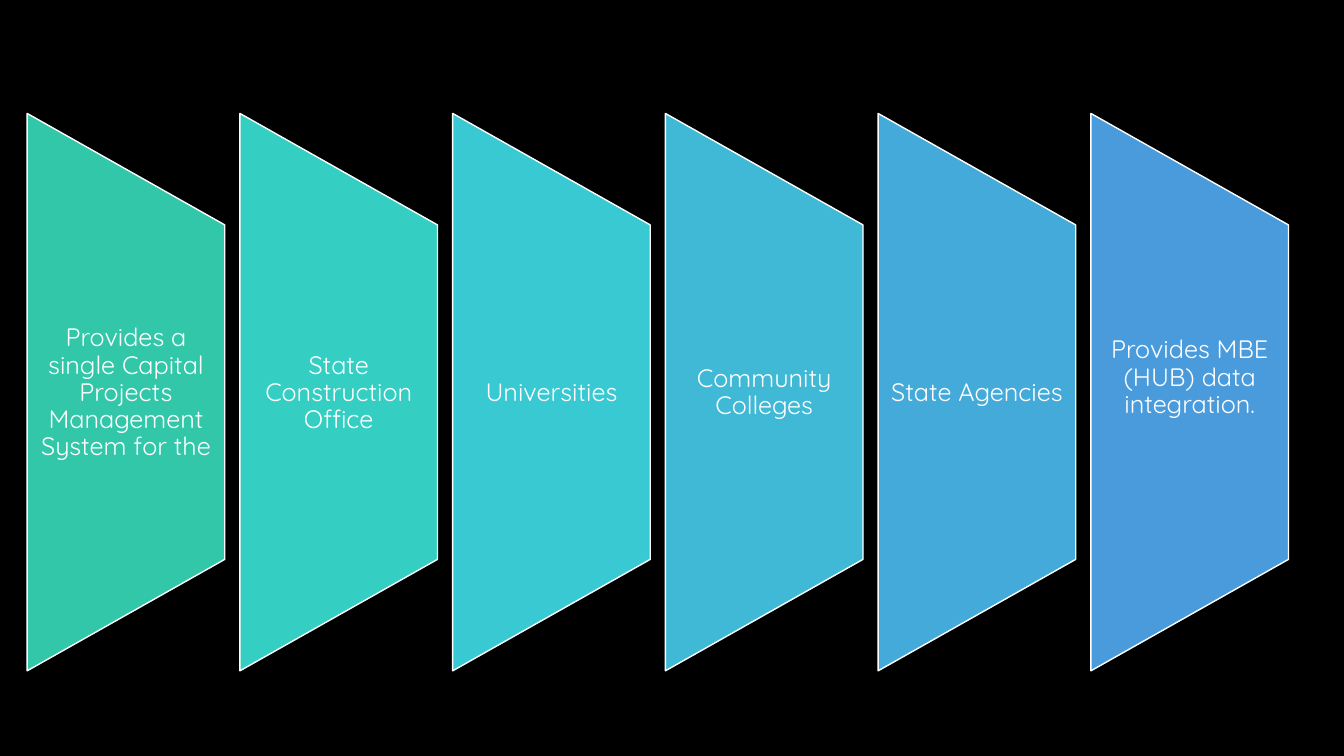
"""Build a slide of six tapered panels describing a capital projects system."""
from dataclasses import dataclass

from pptx import Presentation
from pptx.dml.color import RGBColor
from pptx.enum.shapes import MSO_SHAPE
from pptx.enum.text import MSO_ANCHOR, PP_ALIGN
from pptx.slide import Slide
from pptx.util import Inches, Pt

BLACK = RGBColor(0x00, 0x00, 0x00)
WHITE = RGBColor(0xFF, 0xFF, 0xFF)
GREEN = RGBColor(0x32, 0xC7, 0xA9)
TEAL = RGBColor(0x34, 0xCE, 0xC3)
TURQUOISE = RGBColor(0x39, 0xC9, 0xD2)
CYAN = RGBColor(0x3F, 0xB9, 0xD5)
SKY = RGBColor(0x44, 0xAA, 0xD9)
BLUE = RGBColor(0x4A, 0x9B, 0xDC)

FONT = "Quicksand"
LEFT, PITCH, MIDDLE = 0.27, 2.11, 3.89
PANEL_WIDTH, PANEL_HEIGHT = 1.96, 5.53
LABEL_TOP, LABEL_HEIGHT = 2.24, 3.32


@dataclass(frozen=True)
class Panel:
    text: str
    color: RGBColor
    bottom_inset: float = 0


PANELS = [
    Panel("Provides a single Capital Projects Management System for the", GREEN),
    Panel("State Construction Office", TEAL),
    Panel("Universities", TURQUOISE),
    Panel("Community Colleges", CYAN),
    Panel("State Agencies", SKY),
    Panel("Provides MBE (HUB) data integration.", BLUE, 0.3),
]


def add_trapezoid(s: Slide, left: float, color: RGBColor) -> None:
    sp = s.shapes.add_shape(
        MSO_SHAPE.FLOWCHART_MANUAL_OPERATION,
        Inches(left + (PANEL_WIDTH - PANEL_HEIGHT) / 2),
        Inches(MIDDLE - PANEL_WIDTH / 2),
        Inches(PANEL_HEIGHT),
        Inches(PANEL_WIDTH),
    )
    sp.rotation = 270
    sp.shadow.inherit = False
    sp.fill.solid()
    sp.fill.fore_color.rgb = color
    sp.line.color.rgb = WHITE
    sp.line.width = Pt(1)


def add_label(s: Slide, left: float, panel: Panel) -> None:
    sp = s.shapes.add_textbox(
        Inches(left), Inches(LABEL_TOP), Inches(PANEL_WIDTH), Inches(LABEL_HEIGHT)
    )
    tf = sp.text_frame
    tf.word_wrap = True
    tf.vertical_anchor = MSO_ANCHOR.MIDDLE
    tf.margin_left = tf.margin_right = Inches(0.12)
    tf.margin_top = 0
    tf.margin_bottom = Inches(panel.bottom_inset)
    p = tf.paragraphs[0]
    p.text = panel.text
    p.alignment = PP_ALIGN.CENTER
    p.line_spacing = 0.9
    p.font.name = FONT
    p.font.size = Pt(18)
    p.font.color.rgb = WHITE


def main() -> None:
    prs = Presentation()
    prs.slide_width, prs.slide_height = Inches(13.33), Inches(7.5)
    s = prs.slides.add_slide(prs.slide_layouts[6])
    s.background.fill.solid()
    s.background.fill.fore_color.rgb = BLACK
    for i, panel in enumerate(PANELS):
        left = LEFT + i * PITCH
        add_trapezoid(s, left, panel.color)
        add_label(s, left, panel)
    prs.save("out.pptx")


if __name__ == "__main__":
    main()
